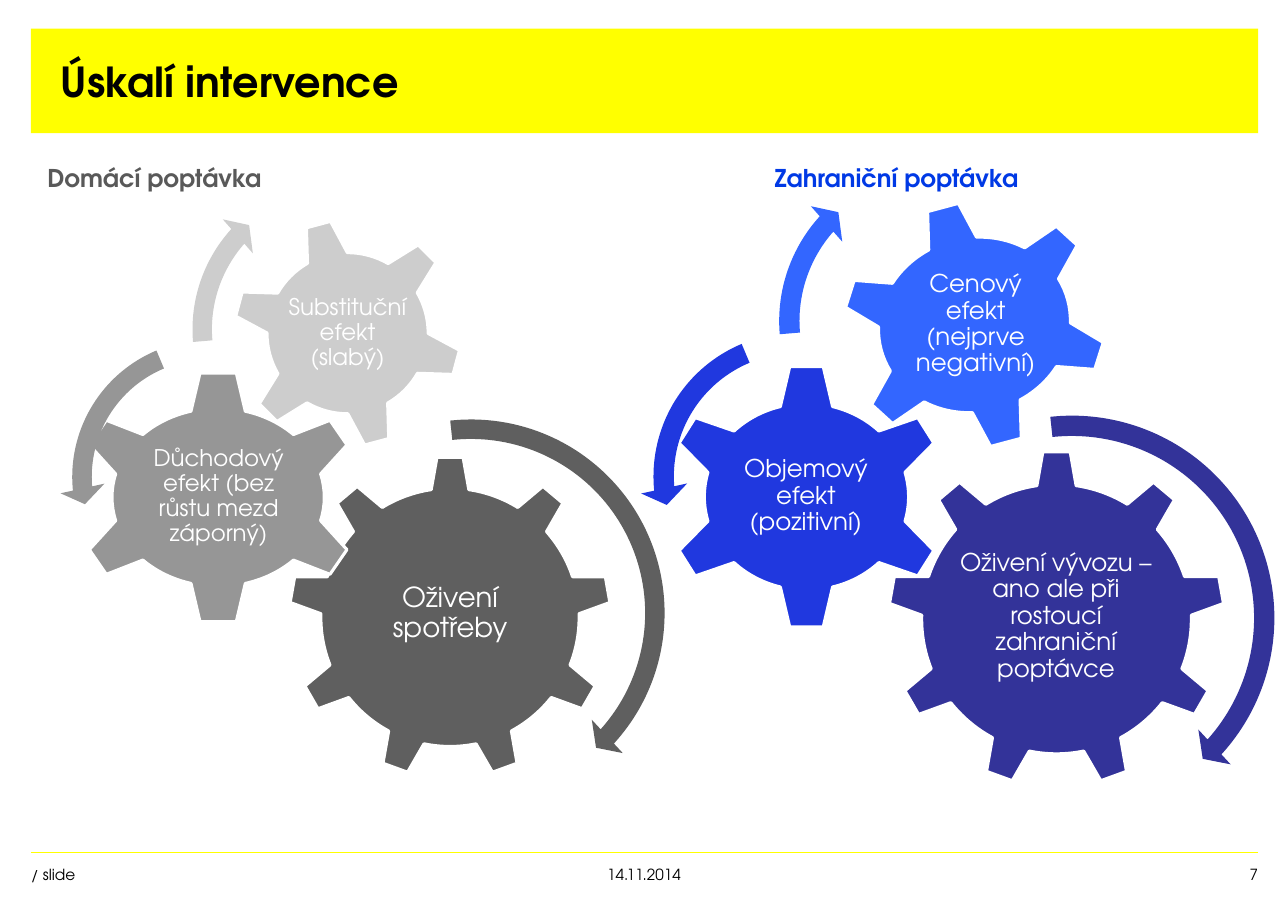
import pptx
import pptx.util
import pptx.dml.color
import pptx.enum.shapes
import pptx.enum.text
import pptx.oxml
import lxml.etree

Inches = pptx.util.Inches
Pt = pptx.util.Pt
MSO = pptx.enum.shapes.MSO_SHAPE
ALIGN = pptx.enum.text.PP_ALIGN
ANCHOR = pptx.enum.text.MSO_ANCHOR
FONT = "TeX Gyre Adventor"


def rgb(value):
    return pptx.dml.color.RGBColor.from_string(value)


def write(sp, text, size, color="000000", bold=False, align=ALIGN.LEFT,
          anchor=ANCHOR.TOP, insets=(0, 0, 0, 0)):
    tf = sp.text_frame
    tf.word_wrap = True
    tf.auto_size = pptx.enum.text.MSO_AUTO_SIZE.NONE
    tf.vertical_anchor = anchor
    tf.margin_left, tf.margin_top, tf.margin_right, tf.margin_bottom = map(Inches, insets)
    p = tf.paragraphs[0]
    p.text = text
    p.alignment = align
    p.font.name = FONT
    p.font.size = Pt(size)
    p.font.bold = bold
    p.font.color.rgb = rgb(color)
    return p


prs = pptx.Presentation()
prs.slide_width = Inches(11.69)
prs.slide_height = Inches(8.27)
s = prs.slides.add_slide(prs.slide_layouts[5])

bar = s.shapes.add_shape(MSO.RECTANGLE, Inches(0.28), Inches(0.26), Inches(11.14), Inches(0.95))
bar.shadow.inherit = False
bar.fill.solid()
bar.fill.fore_color.rgb = rgb("FFFF00")
bar.line.fill.background()

rule = s.shapes.add_connector(pptx.enum.shapes.MSO_CONNECTOR.STRAIGHT,
                              Inches(0.28), Inches(7.74), Inches(11.42), Inches(7.74))
rule.line.color.rgb = rgb("FFFF00")
rule.line.width = Pt(1)
lxml.etree.SubElement(rule._element.spPr, pptx.oxml.ns.qn("a:effectLst"))

title = s.shapes.title
s.shapes._spTree.append(title._element)
title.left, title.top, title.width, title.height = map(Inches, (0.55, 0.26, 7.86, 0.95))
write(title, "Úskalí intervence", 27, bold=True, anchor=ANCHOR.MIDDLE)

footers = [
    ("/ slide", 0.28, 4.65, ALIGN.LEFT),
    ("14.11.2014", 4.93, 1.83, ALIGN.CENTER),
    ("7", 6.76, 4.66, ALIGN.RIGHT),
]
for text, left, width, align in footers:
    sp = s.shapes.add_textbox(Inches(left), Inches(7.85), Inches(width), Inches(0.42))
    write(sp, text, 10, align=align)

gears = [
    (MSO.GEAR_9, (2.62, 4.14, 2.93, 2.93), 0, "5F5F5F",
     "Oživení spotřeby", 18, (3.21, 4.82, 1.75, 1.5)),
    (MSO.GEAR_6, (0.67, 3.36, 2.62, 2.31), 0, "969696",
     "Důchodový efekt (bez růstu mezd záporný)", 15, (1.3, 3.94, 1.37, 1.14)),
    (MSO.GEAR_6, (2.11, 1.98, 2.09, 2.09), 345, "CDCDCD",
     "Substituční efekt (slabý)", 15, (2.57, 2.44, 1.17, 1.17)),
    (MSO.GEAR_9, (8.06, 4.09, 3.06, 3.06), 0, "333399",
     "Oživení vývozu – ano ale při rostoucí zahraniční poptávce", 16, (8.67, 4.81, 1.83, 1.57)),
    (MSO.GEAR_6, (6.03, 3.3, 2.58, 2.42), 0, "2038DF",
     "Objemový efekt (pozitivní)", 16, (6.66, 3.91, 1.31, 1.19)),
    (MSO.GEAR_6, (7.63, 1.82, 2.43, 2.26), 345, "3366FF",
     "Cenový efekt (nejprve negativní)", 16, (8.18, 2.3, 1.35, 1.29)),
]
for kind, box, rotation, color, text, size, text_box in gears:
    gear = s.shapes.add_shape(kind, *map(Inches, box))
    gear.shadow.inherit = False
    gear.rotation = rotation
    gear.fill.solid()
    gear.fill.fore_color.rgb = rgb(color)
    gear.line.color.rgb = rgb("FFFFFF")
    gear.line.width = Pt(2)
    sp = s.shapes.add_textbox(*map(Inches, text_box))
    p = write(sp, text, size, "FFFFFF", align=ALIGN.CENTER,
              anchor=ANCHOR.MIDDLE, insets=(0.02, 0.02, 0.02, 0.02))
    p.line_spacing = 0.9

large = (MSO.CIRCULAR_ARROW, (4.7 / 100, 2.99, 25.3, 158.3, 5.5 / 100))
middle = (MSO.LEFT_CIRCULAR_ARROW, (6.5 / 100, 4.3, 104.89, 148.38, 7.5 / 100))
small = (MSO.CIRCULAR_ARROW, (6 / 100, 3.94, 133.14, 105.08, 7 / 100))
arrows = [
    (large, 2.4, 3.69, 3.75, "5F5F5F"),
    (middle, 0.54, 2.97, 2.72, "969696"),
    (small, 1.63, 1.52, 2.94, "CDCDCD"),
    (large, 7.77, 3.65, 3.92, "333399"),
    (middle, 5.81, 2.9, 2.85, "2038DF"),
    (small, 6.95, 1.38, 3.07, "3366FF"),
]
for (kind, adjustments), left, top, size, color in arrows:
    arrow = s.shapes.add_shape(kind, Inches(left), Inches(top), Inches(size), Inches(size))
    arrow.shadow.inherit = False
    for i, value in enumerate(adjustments):
        arrow.adjustments[i] = value
    arrow.fill.solid()
    arrow.fill.fore_color.rgb = rgb(color)
    arrow.line.fill.background()

headings = [
    ("Domácí poptávka", 0.31, 4.04, "595959"),
    ("Zahraniční poptávka", 6.91, 4.13, "0039E5"),
]
for text, left, width, color in headings:
    sp = s.shapes.add_textbox(Inches(left), Inches(1.32), Inches(width), Inches(0.51))
    write(sp, text, 16, color, bold=True, insets=(0.12, 0.16, 0.12, 0))

prs.save("out.pptx")
